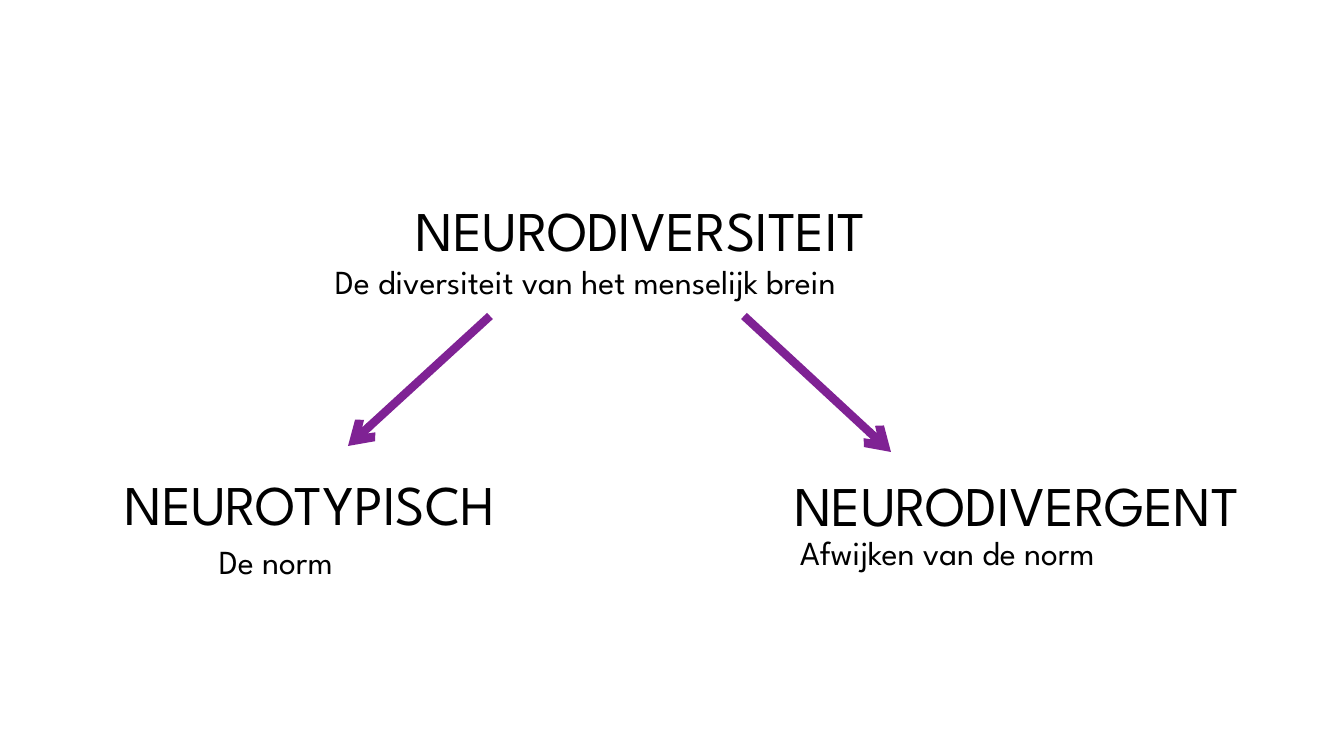
from lxml import etree
from pptx import Presentation
from pptx import util as u
from pptx.dml.color import RGBColor
from pptx.enum import shapes, text
from pptx.oxml import ns

EMU_PER_PX = 914400 / 100.8
FONT = "League Spartan"
BLACK = "000000"
PURPLE = "7F2294"


def px(length):
    return u.Emu(round(length * EMU_PER_PX))


def color(hex_value):
    return RGBColor.from_string(hex_value)


def add_text(slide, wording, box, size, align, anchor, line_spacing):
    frame = slide.shapes.add_textbox(*map(px, box)).text_frame
    frame.word_wrap = True
    frame.vertical_anchor = anchor
    paragraph = frame.paragraphs[0]
    paragraph.alignment = align
    paragraph.line_spacing = line_spacing
    run = paragraph.add_run()
    run.text = wording
    run.font.name = FONT
    run.font.size = u.Pt(size)
    run.font.color.rgb = color(BLACK)


def add_term(slide, wording, box):
    add_text(slide, wording, box, 40, text.PP_ALIGN.RIGHT,
             text.MSO_ANCHOR.MIDDLE, 0.9)


def add_meaning(slide, wording, box, line_spacing=1.1):
    add_text(slide, wording, box, 24, text.PP_ALIGN.LEFT,
             text.MSO_ANCHOR.TOP, line_spacing)


def add_arrow(slide, start, end):
    arrow = slide.shapes.add_connector(
        shapes.MSO_CONNECTOR.STRAIGHT, *map(px, start + end))
    arrow.line.color.rgb = color(PURPLE)
    arrow.line.width = u.Pt(6)
    etree.SubElement(arrow.line._get_or_add_ln(), ns.qn("a:tailEnd"), type="arrow")
    etree.SubElement(arrow._element.spPr, ns.qn("a:effectLst"))


def main():
    deck = Presentation()
    deck.slide_width, deck.slide_height = px(1344), px(756)
    slide = deck.slides.add_slide(deck.slide_layouts[6])

    # Umbrella term
    add_term(slide, "NEURODIVERSITEIT", (360, 162, 515, 142))
    add_meaning(slide, "De diversiteit van het menselijk brein", (325, 252, 621, 55))

    # Branches
    add_arrow(slide, (490, 316), (348, 446))
    add_arrow(slide, (744, 316), (891, 452))

    # Neurotypical
    add_term(slide, "NEUROTYPISCH", (79, 436, 426, 142))
    add_meaning(slide, "De norm", (209, 528, 166, 58), 1.2)

    # Neurodivergent
    add_term(slide, "NEURODIVERGENT", (712, 458, 537, 100))
    add_meaning(slide, "Afwijken van de norm", (790, 523, 379, 55))

    deck.save("out.pptx")


if __name__ == "__main__":
    main()
